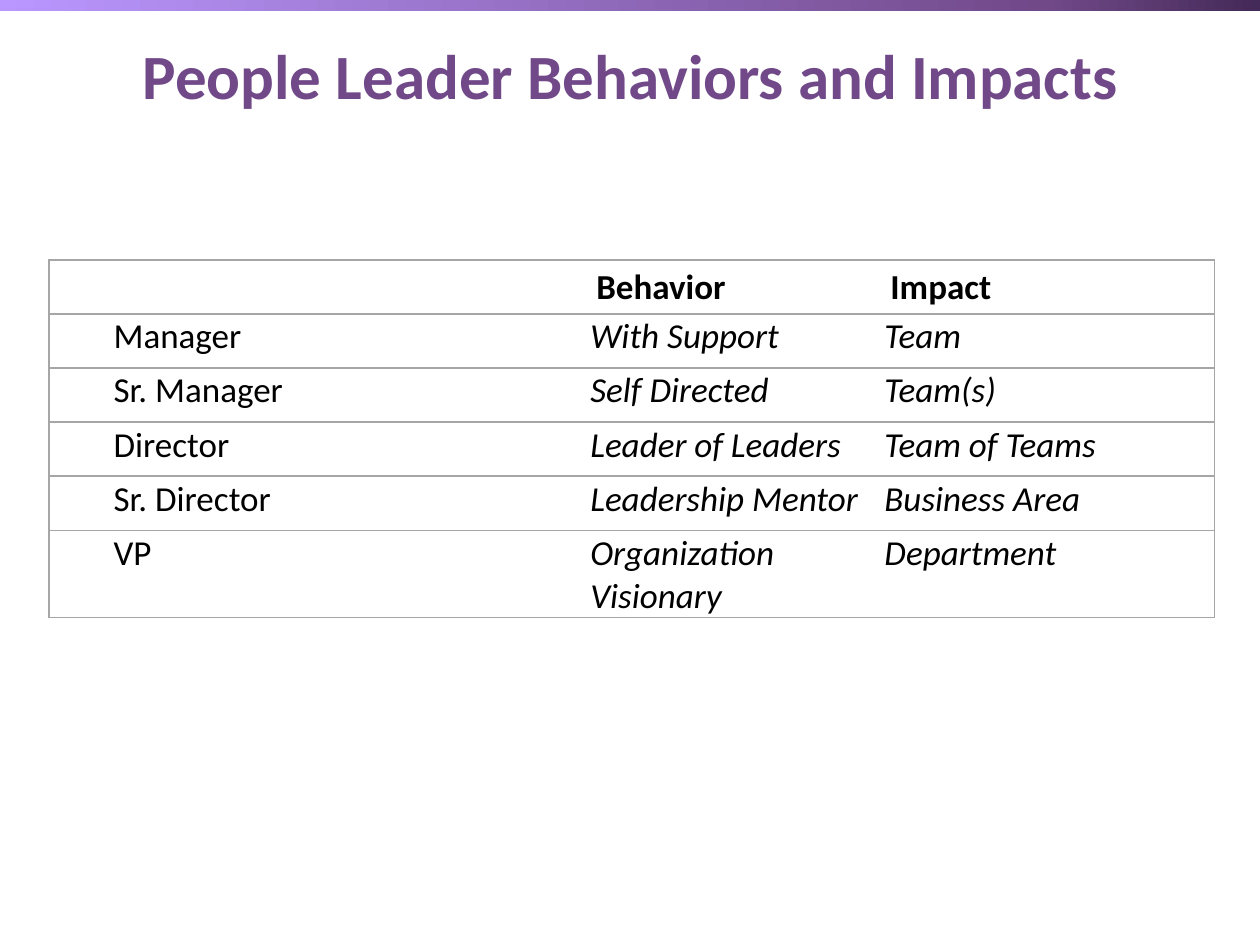
import dataclasses

import lxml.etree
import pptx
import pptx.dml.color
import pptx.enum.dml
import pptx.enum.shapes
import pptx.enum.text
import pptx.oxml
import pptx.oxml.ns
import pptx.util

Cm = pptx.util.Cm


@dataclasses.dataclass(frozen=True)
class Theme:
    """Colours, font and type sizes of the slide."""
    font: str = "Calibri"
    title_color: str = "714989"
    text_color: str = "000000"
    border_color: str = "A6A6A6"
    bar_stops: tuple = ((0, "442A58"), (17, "714989"), (100, "BA97FF"))
    title_size: int = 36
    table_size: int = 20
    border_width: int = 1


THEME = Theme()
HEADINGS = ("", "Behavior", "Impact")
LEVELS = (
    ("Manager", "With Support", "Team"),
    ("Sr. Manager", "Self Directed", "Team(s)"),
    ("Director", "Leader of Leaders", "Team of Teams"),
    ("Sr. Director", "Leadership Mentor", "Business Area"),
    ("VP", "Organization Visionary", "Department"),
)


def add_run(paragraph, text, size, color, bold=False, italic=False):
    """Append one formatted run to a paragraph."""
    run = paragraph.add_run()
    run.text = text
    run.font.name = THEME.font
    run.font.size = pptx.util.Pt(size)
    run.font.bold = bold
    run.font.italic = italic
    run.font.color.rgb = pptx.dml.color.RGBColor.from_string(color)


def add_top_bar(slide, left, top, width, height):
    """Draw the gradient bar behind everything else."""
    bar = slide.shapes.add_shape(
        pptx.enum.shapes.MSO_SHAPE.RECTANGLE, left, top, width, height)
    bar.shadow.inherit = False
    bar.line.fill.background()
    bar.fill.gradient()
    bar.fill.gradient_angle = 180
    stop_list = bar._element.spPr.find(".//" + pptx.oxml.ns.qn("a:gsLst"))
    for stop in list(stop_list):
        stop_list.remove(stop)
    for position, color in THEME.bar_stops:
        stop = lxml.etree.SubElement(
            stop_list, pptx.oxml.ns.qn("a:gs"), pos=str(position * 1000))
        lxml.etree.SubElement(stop, pptx.oxml.ns.qn("a:srgbClr"), val=color)
    slide.shapes._spTree.insert(2, bar._element)


def place_title(slide, text, left, top, width, height):
    """Move and fill the title placeholder."""
    title = slide.shapes.title
    title.left, title.top, title.width, title.height = left, top, width, height
    frame = title.text_frame
    frame.word_wrap = True
    frame.vertical_anchor = pptx.enum.text.MSO_ANCHOR.MIDDLE
    paragraph = frame.paragraphs[0]
    paragraph.alignment = pptx.enum.text.PP_ALIGN.CENTER
    add_run(paragraph, text, THEME.title_size, THEME.title_color, bold=True)


def set_borders(cell, sides):
    """Give the named sides of a cell a thin line and the others none."""
    properties = cell._tc.get_or_add_tcPr()
    for side in "LRTB":
        line = lxml.etree.SubElement(
            properties, pptx.oxml.ns.qn("a:ln" + side),
            w=str(pptx.util.Pt(THEME.border_width)))
        if side in sides:
            fill = lxml.etree.SubElement(line, pptx.oxml.ns.qn("a:solidFill"))
            lxml.etree.SubElement(
                fill, pptx.oxml.ns.qn("a:srgbClr"), val=THEME.border_color)
        else:
            lxml.etree.SubElement(line, pptx.oxml.ns.qn("a:noFill"))


def fill_cell(cell, text, is_header, column):
    """Format one table cell and write its text."""
    set_borders(cell, ("LTB", "TB", "RTB")[column])
    cell.fill.background()
    cell.margin_left = cell.margin_right = Cm(0.15 if is_header else 0.03)
    cell.margin_top = Cm(0 if is_header else 0.03)
    cell.margin_bottom = Cm(0)
    if not text:
        return
    paragraph = cell.text_frame.paragraphs[0]
    if is_header:
        paragraph.line_spacing = 1.15
    elif column == 0:
        paragraph.level = 1
        properties = paragraph._p.get_or_add_pPr()
        properties.set("marL", str(Cm(1.27)))
        properties.set("indent", "0")
    add_run(paragraph, text, THEME.table_size, THEME.text_color,
            bold=is_header, italic=not is_header and column > 0)


def add_level_table(slide, left, top, column_widths, row_height):
    """Add the table of leader levels, behaviors and impacts."""
    rows = (HEADINGS,) + LEVELS
    table = slide.shapes.add_table(
        len(rows), len(HEADINGS), left, top,
        sum(column_widths), row_height * len(rows)).table
    table.first_row = table.horz_banding = False
    for column, width in zip(table.columns, column_widths):
        column.width = width
    for row_index, texts in enumerate(rows):
        table.rows[row_index].height = row_height
        for column_index, text in enumerate(texts):
            fill_cell(table.cell(row_index, column_index), text,
                      row_index == 0, column_index)


def main():
    """Build and save the presentation."""
    presentation = pptx.Presentation()
    presentation.slide_width = Cm(25.4)
    presentation.slide_height = Cm(19.05)
    slide = presentation.slides.add_slide(presentation.slide_layouts[5])
    add_top_bar(slide, Cm(-0.05), Cm(-0.05), Cm(25.45), Cm(0.28))
    place_title(slide, "People Leader Behaviors and Impacts",
                Cm(0.71), Cm(0.2), Cm(24), Cm(2.59))
    add_level_table(slide, Cm(0.99), Cm(5.24),
                    (Cm(10.88), Cm(5.93), Cm(6.68)), Cm(1.09))
    presentation.save("out.pptx")


if __name__ == "__main__":
    main()
